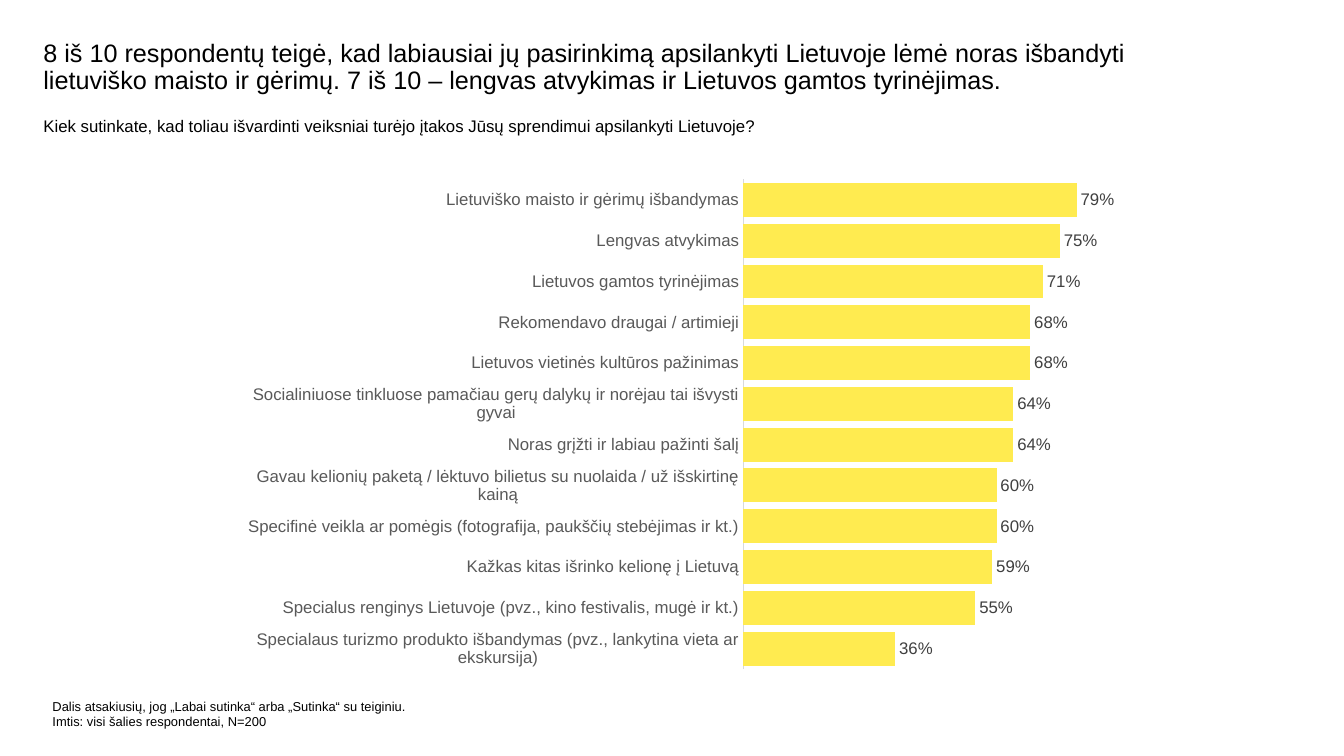
from pptx import Presentation
from pptx.chart.data import CategoryChartData
from pptx.dml.color import RGBColor
from pptx.enum.chart import XL_CHART_TYPE, XL_LABEL_POSITION, XL_TICK_MARK
from pptx.util import Inches, Pt

FONT = "Arial"
COLORS = {"text": "000000", "axis": "595959", "line": "D9D9D9",
          "bar": "FFEB50", "label": "404040"}

TITLE = ("8 iš 10 respondentų teigė, kad labiausiai jų pasirinkimą apsilankyti "
         "Lietuvoje lėmė noras išbandyti lietuviško maisto ir gėrimų. "
         "7 iš 10 – lengvas atvykimas ir Lietuvos gamtos tyrinėjimas.")
QUESTION = ("Kiek sutinkate, kad toliau išvardinti veiksniai turėjo įtakos "
            "Jūsų sprendimui apsilankyti Lietuvoje?")
NOTES = ["Dalis atsakiusių, jog „Labai sutinka“ arba „Sutinka“ su teiginiu.",
         "Imtis: visi šalies respondentai, N=200"]
FACTORS = [
    ("Specialaus turizmo produkto išbandymas (pvz., lankytina vieta ar ekskursija)", 0.36),
    ("Specialus renginys Lietuvoje (pvz., kino festivalis, mugė ir kt.)", 0.55),
    ("Kažkas kitas išrinko kelionę į Lietuvą", 0.59),
    ("Specifinė veikla ar pomėgis (fotografija, paukščių stebėjimas ir kt.)", 0.6),
    ("Gavau kelionių paketą / lėktuvo bilietus su nuolaida / už išskirtinę kainą", 0.6),
    ("Noras grįžti ir labiau pažinti šalį", 0.64),
    ("Socialiniuose tinkluose pamačiau gerų dalykų ir norėjau tai išvysti gyvai", 0.64),
    ("Lietuvos vietinės kultūros pažinimas", 0.68),
    ("Rekomendavo draugai / artimieji", 0.68),
    ("Lietuvos gamtos tyrinėjimas", 0.71),
    ("Lengvas atvykimas", 0.75),
    ("Lietuviško maisto ir gėrimų išbandymas", 0.79),
]


def color(name):
    return RGBColor.from_string(COLORS[name])


def style(font, size, name):
    font.name = FONT
    font.size = Pt(size)
    font.color.rgb = color(name)


def add_text(slide, box, lines, size, spacing=None):
    frame = slide.shapes.add_textbox(*map(Inches, box)).text_frame
    frame.word_wrap = True
    frame.margin_left = frame.margin_right = 0
    frame.margin_top = frame.margin_bottom = 0
    frame.text = "\n".join(lines)
    for line in frame.paragraphs:
        line.line_spacing = spacing
        style(line.font, size, "text")


def add_bars(slide, box):
    data = CategoryChartData(number_format="0%")
    data.categories = [name for name, _ in FACTORS]
    data.add_series("Series 1", [share for _, share in FACTORS])
    chart = slide.shapes.add_chart(
        XL_CHART_TYPE.BAR_CLUSTERED, *map(Inches, box), data).chart
    chart.has_legend = chart.has_title = False
    style(chart.font, 10, "text")

    axis = chart.category_axis
    axis.major_tick_mark = axis.minor_tick_mark = XL_TICK_MARK.NONE
    axis.format.line.color.rgb = color("line")
    axis.format.line.width = Pt(0.75)
    style(axis.tick_labels.font, 12, "axis")

    scale = chart.value_axis
    scale.visible = scale.has_major_gridlines = False
    scale.minimum_scale, scale.maximum_scale = 0, 0.9

    plot = chart.plots[0]
    plot.gap_width = 20
    plot.vary_by_categories = False
    fill = plot.series[0].format.fill
    fill.solid()
    fill.fore_color.rgb = color("bar")

    plot.has_data_labels = True
    labels = plot.data_labels
    labels.show_value = True
    labels.number_format = "0%"
    labels.number_format_is_linked = False
    labels.position = XL_LABEL_POSITION.OUTSIDE_END
    style(labels.font, 12, "label")


def main():
    deck = Presentation()
    deck.slide_width, deck.slide_height = Inches(13.33), Inches(7.5)
    slide = deck.slides.add_slide(deck.slide_layouts[6])
    add_text(slide, (0.43, 0.4, 11.25, 0.6), [TITLE], 18, 0.9)
    add_text(slide, (0.43, 1.15, 11.89, 0.61), [QUESTION], 12)
    add_text(slide, (0.52, 6.93, 3.52, 0.4), NOTES, 9.2)
    add_bars(slide, (2.28, 1.68, 9.04, 5.06))
    deck.save("out.pptx")


if __name__ == "__main__":
    main()
